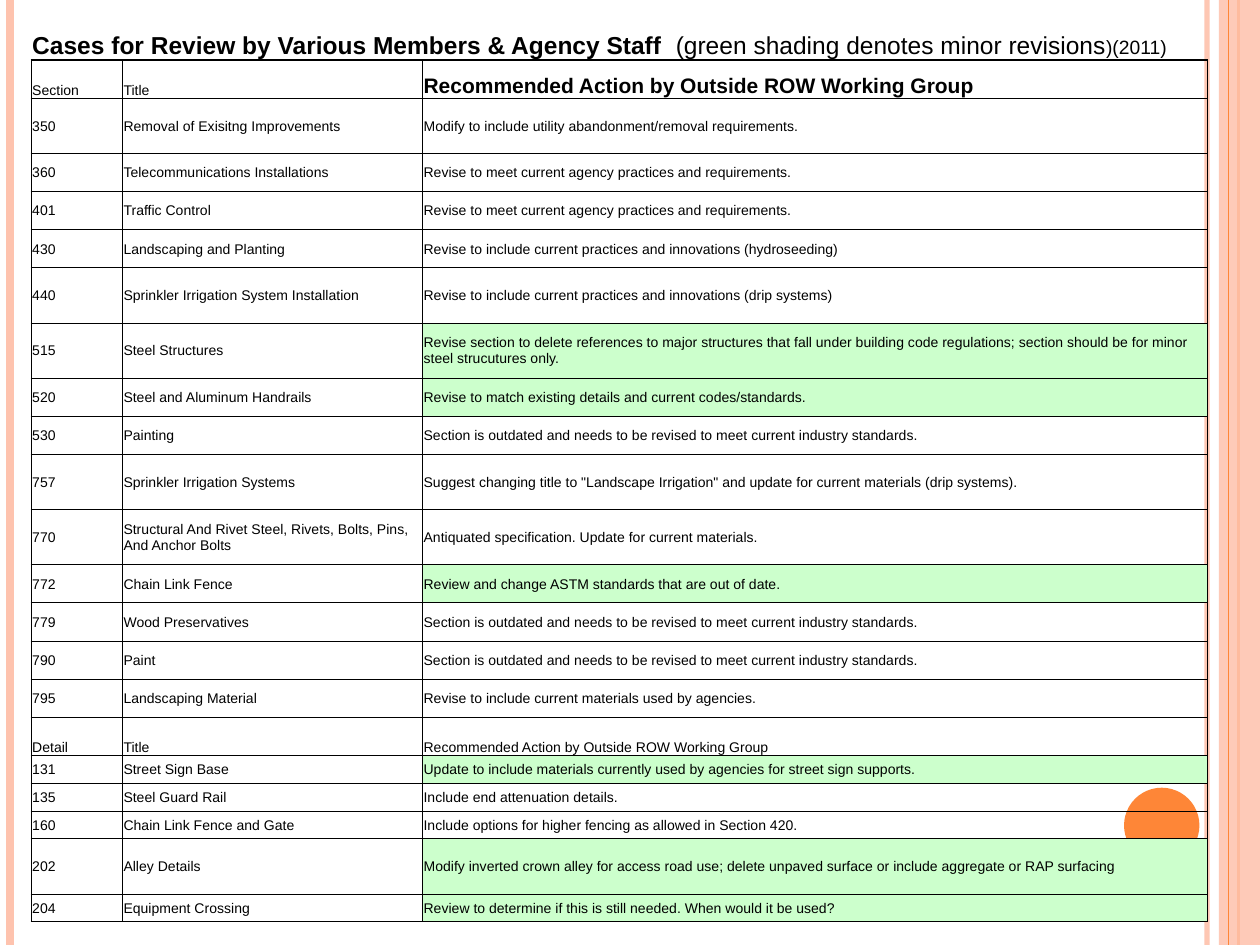
from pptx import Presentation
from pptx import util as u
from pptx.dml import color
from pptx.enum import shapes, text
from pptx.oxml import ns
from lxml import etree

COLORS = {"ink": "000000", "green": "CCFFCC", "peach": "FEC3AE", "orange": "FE8637"}
FONT = "Arial"
TITLE_H, SHORT, MEDIUM, TALL = 0.58, 0.56, 0.77, 1.11  # row heights in cm
ACTION = "Recommended Action by Outside ROW Working Group"
AGENCY = "Revise to meet current agency practices and requirements."
OUTDATED = "Section is outdated and needs to be revised to meet current industry standards."

# Height, shaded as minor revision, section or detail, title, action
ROWS = [
    (MEDIUM, False, "Section", "Title", ACTION),
    (TALL, False, "350", "Removal of Exisitng Improvements",
     "Modify to include utility abandonment/removal requirements."),
    (MEDIUM, False, "360", "Telecommunications Installations", AGENCY),
    (MEDIUM, False, "401", "Traffic Control", AGENCY),
    (MEDIUM, False, "430", "Landscaping and Planting",
     "Revise to include current practices and innovations (hydroseeding)"),
    (TALL, False, "440", "Sprinkler Irrigation System Installation",
     "Revise to include current practices and innovations (drip systems)"),
    (TALL, True, "515", "Steel Structures",
     "Revise section to delete references to major structures that fall under building "
     "code regulations; section should be for minor steel strucutures only."),
    (MEDIUM, True, "520", "Steel and Aluminum Handrails",
     "Revise to match existing details and current codes/standards."),
    (MEDIUM, False, "530", "Painting", OUTDATED),
    (TALL, False, "757", "Sprinkler Irrigation Systems",
     'Suggest changing title to "Landscape Irrigation" and update for current materials '
     "(drip systems)."),
    (TALL, False, "770", "Structural And Rivet Steel, Rivets, Bolts, Pins, And Anchor Bolts",
     "Antiquated specification. Update for current materials."),
    (MEDIUM, True, "772", "Chain Link Fence",
     "Review and change ASTM standards that are out of date."),
    (MEDIUM, False, "779", "Wood Preservatives", OUTDATED),
    (MEDIUM, False, "790", "Paint", OUTDATED),
    (MEDIUM, False, "795", "Landscaping Material",
     "Revise to include current materials used by agencies."),
    (MEDIUM, False, "Detail", "Title", ACTION),
    (SHORT, True, "131", "Street Sign Base",
     "Update to include materials currently used by agencies for street sign supports."),
    (SHORT, False, "135", "Steel Guard Rail", "Include end attenuation details."),
    (SHORT, False, "160", "Chain Link Fence and Gate",
     "Include options for higher fencing as allowed in Section 420."),
    (TALL, True, "202", "Alley Details",
     "Modify inverted crown alley for access road use; delete unpaved surface or include "
     "aggregate or RAP surfacing"),
    (SHORT, True, "204", "Equipment Crossing",
     "Review to determine if this is still needed. When would it be used?"),
]


def paint(fill, name, alpha=100):
    fill.solid()
    fill.fore_color.rgb = color.RGBColor.from_string(COLORS[name])
    if alpha < 100:
        tint = fill._xPr.find(".//" + ns.qn("a:srgbClr"))
        etree.SubElement(tint, ns.qn("a:alpha"), val=str(alpha * 1000))


def style_cell(cell, anchor, borders):
    """Set insets and anchor, and draw the borders given as {side: points}."""
    cell.margin_left = cell.margin_right = cell.margin_top = u.Cm(0.02)
    cell.margin_bottom = 0
    cell.vertical_anchor = anchor
    properties = cell._tc.get_or_add_tcPr()
    for side in "LRTB":
        width = borders.get(side, 0)
        line = etree.SubElement(properties, ns.qn("a:ln" + side), w=str(u.Pt(width)))
        if width:
            fill = etree.SubElement(line, ns.qn("a:solidFill"))
            etree.SubElement(fill, ns.qn("a:srgbClr"), val=COLORS["ink"])
        else:
            etree.SubElement(line, ns.qn("a:noFill"))


deck = Presentation()
deck.slide_width, deck.slide_height = u.Cm(25.4), u.Cm(19.05)
page = deck.slides.add_slide(deck.slide_layouts[6])

# Side stripes, the translucent band and the disc
stripes = [(24.33, "peach", 3, 93), (0.2, "peach", 4.5, 100), (24.97, "orange", 1.5, 100),
           None, (24.77, "orange", 0.75, 100)]
for stripe in stripes:
    if stripe is None:
        band = page.shapes.add_shape(shapes.MSO_SHAPE.RECTANGLE, u.Cm(24.57), 0,
                                     u.Cm(0.83), deck.slide_height)
        paint(band.fill, "peach", 87)
        continue
    x, name, width, alpha = stripe
    rule = page.shapes.add_connector(shapes.MSO_CONNECTOR.STRAIGHT, u.Cm(x), 0,
                                     u.Cm(x), deck.slide_height)
    rule.line.width = u.Pt(width)
    paint(rule.line.fill, name, alpha)
    etree.SubElement(rule._element.spPr, ns.qn("a:effectLst"))
disc = page.shapes.add_shape(shapes.MSO_SHAPE.OVAL, u.Cm(22.66), u.Cm(15.88),
                             u.Cm(1.52), u.Cm(1.52))
paint(disc.fill, "orange")
for ornament in (band, disc):
    ornament.line.fill.background()
    ornament.shadow.inherit = False

# Table grid without a built-in style
widths = [1.84, 6.05, 15.82]
heights = [TITLE_H] + [row[0] for row in ROWS]
frame = page.shapes.add_table(len(heights), len(widths), u.Cm(0.63), u.Cm(0.63),
                              u.Cm(sum(widths)), u.Cm(sum(heights)))
table = frame.table
table.first_row = table.horz_banding = False
style_id = table._tbl.tblPr.find(ns.qn("a:tableStyleId"))
style_id.text = "{2D5ABB26-0587-4C30-8999-92F81FD0307C}"
for column, width in zip(table.columns, widths):
    column.width = u.Cm(width)
for row, height in zip(table.rows, heights):
    row.height = u.Cm(height)

# Title across all columns
title = table.cell(0, 0)
title.merge(table.cell(0, 2))
for cell in table.rows[0].cells:
    style_cell(cell, text.MSO_ANCHOR.BOTTOM, {"B": 1})
    cell.fill.background()
para = title.text_frame.paragraphs[0]
for words, size, bold in [("Cases for Review by Various Members & Agency Staff ", 14, True),
                          (" (green shading denotes minor revisions", 14, False),
                          (")(2011)", 11, False)]:
    span = para.add_run()
    span.text = words
    span.font.size, span.font.bold = u.Pt(size), bold

# Section and detail rows, with heavier lines round each block
for r, (height, minor, *words) in enumerate(ROWS, start=1):
    header = words[1] == "Title"
    block_end = r < len(ROWS) and ROWS[r][3] == "Title"
    for c, content in enumerate(words):
        cell = table.cell(r, c)
        borders = {"L": 1 if c == 0 else 0.5, "R": 1 if c == 2 else 0.5,
                   "T": 1 if header else 0.5, "B": 1 if block_end else 0.5}
        anchor = text.MSO_ANCHOR.BOTTOM if header else text.MSO_ANCHOR.MIDDLE
        style_cell(cell, anchor, borders)
        if minor and c == 2:
            paint(cell.fill, "green")
        else:
            cell.fill.background()
        cell.text_frame.text = content
        large = r == 1 and c == 2
        font = cell.text_frame.paragraphs[0].runs[0].font
        font.size, font.bold = u.Pt(12 if large else 8), large

# Common typeface and colour
for cell in table.iter_cells():
    for span in cell.text_frame.paragraphs[0].runs:
        span.font.name = FONT
        paint(span.font.fill, "ink")

deck.save("out.pptx")
